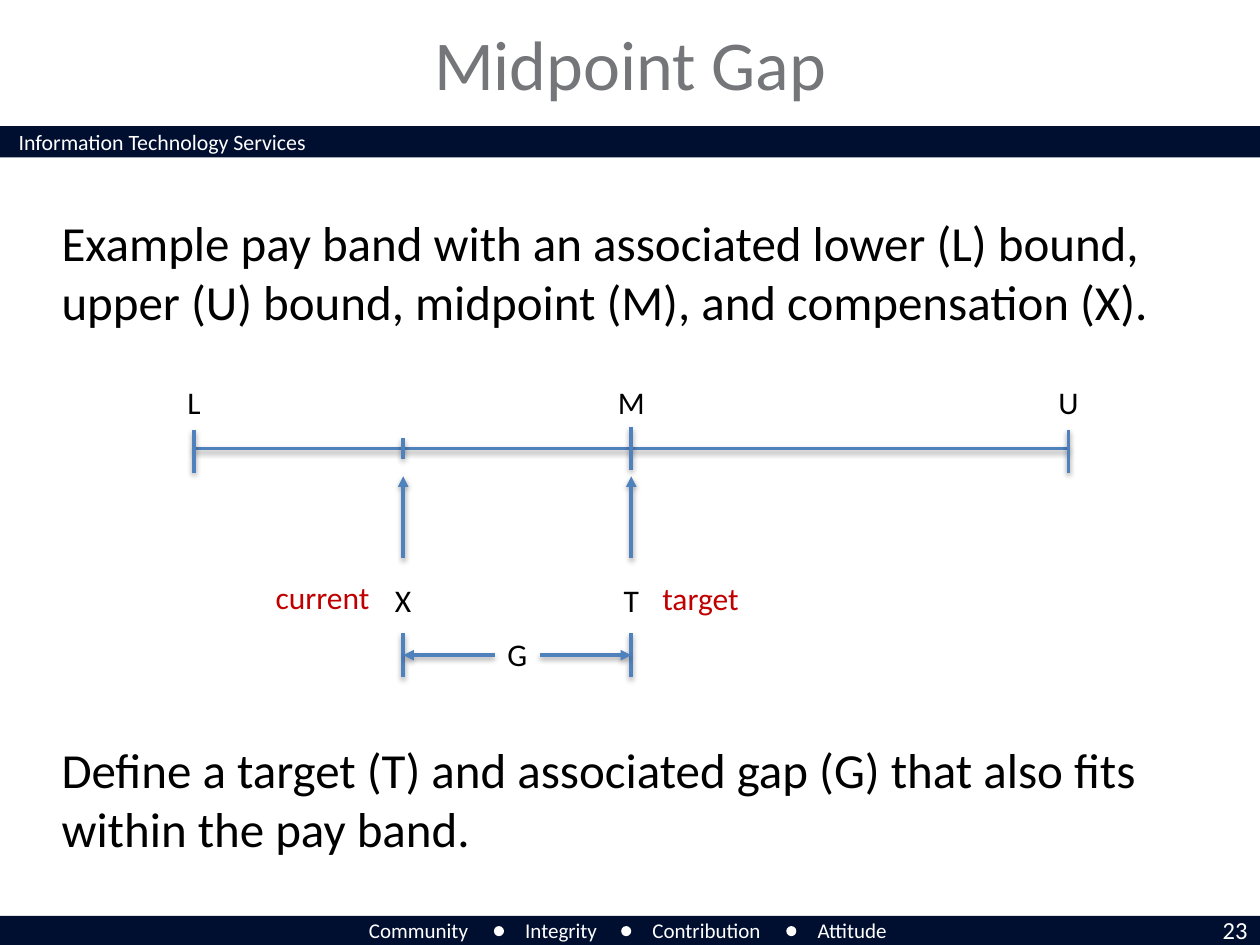
from dataclasses import dataclass
from lxml import etree
from pptx import Presentation, util as u
from pptx.dml.color import RGBColor
from pptx.enum import shapes, text
from pptx.oxml import parse_xml
from pptx.oxml.ns import nsdecls, qn

COLS, ROWS = 100, 75
MID = text.PP_ALIGN.CENTER


@dataclass(frozen=True)
class Theme:
    font: str = "Calibri"
    navy: str = "000E2F"
    white: str = "FFFFFF"
    black: str = "000000"
    grey: str = "747679"
    red: str = "C00000"
    blue: str = "4F81BD"
    title: float = 40
    body: float = 28
    label: float = 18
    page: float = 14
    head: float = 12.5
    foot: float = 12
    line: float = 2


class Board:
    def __init__(self, deck, theme):
        self.deck, self.theme = deck, theme
        self.slide = deck.slides.add_slide(deck.slide_layouts[6])
        self.shapes = self.slide.shapes

    def col(self, n):
        return round(self.deck.slide_width * n / COLS)

    def row(self, n):
        return round(self.deck.slide_height * n / ROWS)

    def box(self, x, y, w, h):
        return self.col(x), self.row(y), self.col(w), self.row(h)

    def shape(self, kind, x, y, w, h, fill):
        item = self.shapes.add_shape(kind, *self.box(x, y, w, h))
        item.shadow.inherit = False
        item.fill.solid()
        item.fill.fore_color.rgb = RGBColor.from_string(fill)
        item.line.fill.background()

    def text(self, words, x, y, w, h, size, color, align=text.PP_ALIGN.LEFT,
             anchor=text.MSO_ANCHOR.TOP, wrap=True):
        frame = self.shapes.add_textbox(*self.box(x, y, w, h)).text_frame
        para = frame.paragraphs[0]
        para.text = words
        font = para.runs[0].font
        for item, style in (
            (frame, {"word_wrap": wrap, "vertical_anchor": anchor}),
            (para, {"alignment": align}),
            (font, {"name": self.theme.font, "size": u.Pt(size)}),
            (font.color, {"rgb": RGBColor.from_string(color)}),
        ):
            for key, value in style.items():
                setattr(item, key, value)

    def label(self, words, mid, y, w, color=None):
        self.text(words, mid - w / 2, y, w, 4, self.theme.label,
                  color or self.theme.black, MID, wrap=False)

    def line(self, x, y, to_x, to_y, arrow=False):
        item = self.shapes.add_connector(
            shapes.MSO_CONNECTOR.STRAIGHT,
            self.col(x), self.row(y), self.col(to_x), self.row(to_y))
        item.line.width = u.Pt(self.theme.line)
        item.line.color.rgb = RGBColor.from_string(self.theme.blue)
        if arrow:
            etree.SubElement(item.line._get_or_add_ln(), qn("a:tailEnd"), type="triangle")
        item._element.spPr.append(parse_xml(
            f'<a:effectLst {nsdecls("a")}><a:outerShdw blurRad="40000" dist="20000"'
            ' dir="5400000" rotWithShape="0"><a:srgbClr val="000000">'
            '<a:alpha val="38000"/></a:srgbClr></a:outerShdw></a:effectLst>'))

    def tick(self, x, mid, size=3.4):
        self.line(x, mid - size / 2, x, mid + size / 2)


def frame(board):
    theme, kind = board.theme, shapes.MSO_SHAPE
    for y, h in ((10, 2.5), (72.7, 2.3)):
        board.shape(kind.RECTANGLE, 0, y, COLS, h, theme.navy)
    board.text("Information Technology Services", 0.5, 9.7, 34, 3.2,
               theme.head, theme.white)
    for word, x, w in (("Community", 28.3, 10), ("Integrity", 40.7, 8),
                       ("Contribution", 50.8, 11), ("Attitude", 63.9, 7.8)):
        board.text(word, x, 72.3, w, 2.7, theme.foot, theme.white, wrap=False)
    for x in (39.2, 49.3, 62.4):
        board.shape(kind.OVAL, x, 73.5, 0.8, 0.8, theme.white)
    board.text("23", 92.4, 72.1, 7.6, 2.9, theme.page, theme.white, text.PP_ALIGN.RIGHT)


def words(board):
    theme = board.theme
    board.text("Midpoint Gap", 10, 1, 80, 8, theme.title, theme.grey,
               MID, text.MSO_ANCHOR.MIDDLE)
    for y, line in (
        (16.4, "Example pay band with an associated lower (L) bound, "
               "upper (U) bound, midpoint (M), and compensation (X)."),
        (58.2, "Define a target (T) and associated gap (G) that also fits "
               "within the pay band."),
    ):
        board.text(line, 3.9, y, 91.3, 10.4, theme.body, theme.black)


def band(board):
    low, now, goal, high = 15.4, 32, 50.1, 84.8
    axis, gap = 35.6, 52
    board.line(low, axis, high, axis)
    for name, x, mid, w in (("L", low, 35.8, 3.1), ("M", goal, 35.6, 4.2),
                            ("U", high, 35.8, 3.6)):
        board.tick(x, mid)
        board.label(name, x, 29.9, w)
    board.tick(now, axis, 1.6)

    mid = (now + goal) / 2
    board.label("G", mid, 49.9, 3.6)
    for name, x, side in (("X", now, -1.8), ("T", goal, 1.8)):
        board.line(x, 44.3, x, 37.8, arrow=True)
        board.label(name, x, 45.6, 3.3)
        board.tick(x, gap, 3.5)
        board.line(mid + side, gap, x, gap, arrow=True)
    board.label("current", 25.6, 45.4, 9.6, board.theme.red)
    board.label("target", 55.6, 45.5, 8.1, board.theme.red)


def main():
    deck = Presentation()
    deck.slide_width, deck.slide_height = u.Inches(10), u.Inches(7.5)
    board = Board(deck, Theme())
    for part in (frame, words, band):
        part(board)
    deck.save("out.pptx")


if __name__ == "__main__":
    main()
